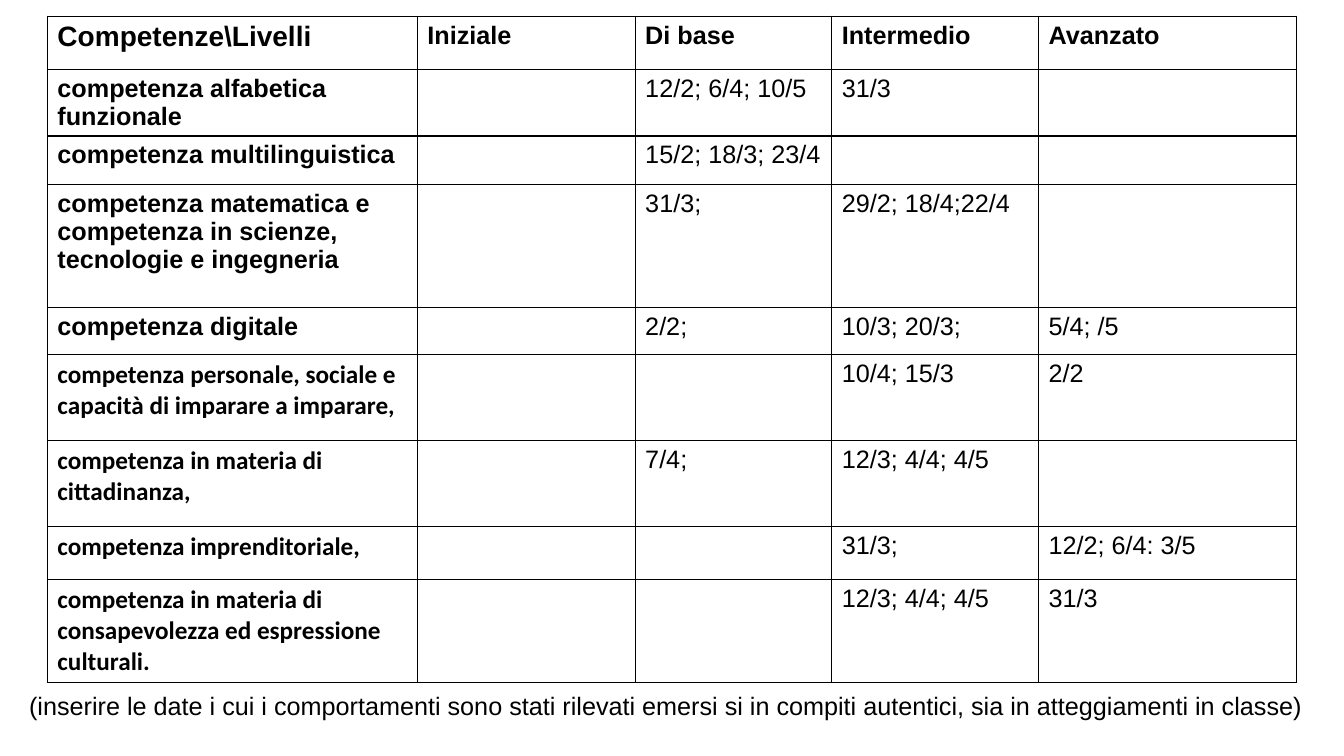
from dataclasses import dataclass

from lxml.etree import SubElement
from pptx import Presentation
from pptx.dml.color import RGBColor
from pptx.enum.text import MSO_AUTO_SIZE
from pptx.oxml.ns import qn
from pptx.util import Inches, Pt


@dataclass(frozen=True)
class Theme:
    ink: str = "000000"
    paper: str = "FFFFFF"
    main_font: str = "Arial"
    label_font: str = "Calibri"
    corner_size: int = 20
    body_size: int = 18
    border_width: int = 1


# Table content: header, then one competence per row
HEADER = ["Competenze\\Livelli", "Iniziale", "Di base", "Intermedio", "Avanzato"]
COMPETENCES = [
    ["competenza alfabetica funzionale", "", "12/2; 6/4; 10/5", "31/3", ""],
    ["competenza multilinguistica", "", "15/2; 18/3; 23/4", "", ""],
    ["competenza matematica e competenza in scienze, tecnologie e ingegneria",
     "", "31/3;", "29/2; 18/4;22/4", ""],
    ["competenza digitale", "", "2/2;", "10/3; 20/3;", "5/4; /5"],
    ["competenza personale, sociale e capacità di imparare a imparare,",
     "", "", "10/4; 15/3", "2/2"],
    ["competenza in materia di cittadinanza,", "", "7/4;", "12/3; 4/4; 4/5", ""],
    ["competenza imprenditoriale,", "", "", "31/3;", "12/2; 6/4: 3/5"],
    ["competenza in materia di consapevolezza ed espressione culturali.",
     "", "", "12/3; 4/4; 4/5", "31/3"],
]
COLUMN_WIDTHS = [3.67, 2.16, 1.95, 2.05, 2.56]
ROW_HEIGHTS = [0.53, 0.66, 0.48, 1.22, 0.47, 0.85, 0.85, 0.53, 1.02]
FIRST_CALIBRI_ROW = 5
NOTE = ("(inserire le date i cui i comportamenti sono stati rilevati emersi si in "
        "compiti autentici, sia in atteggiamenti in classe)")


class SlideBuilder:
    def __init__(self, slide, theme):
        self.slide = slide
        self.theme = theme

    def set_text(self, text_frame, text, **formats):
        paragraph = text_frame.paragraphs[0]
        style = {"name": self.theme.main_font, "size": Pt(self.theme.body_size),
                 "bold": False} | formats
        # Empty cells carry the style on the paragraph itself
        if text:
            run = paragraph.add_run()
            run.text = text
            font = run.font
        else:
            font = paragraph.font
        for name, value in style.items():
            setattr(font, name, value)
        font.color.rgb = RGBColor.from_string(self.theme.ink)

    def add_borders(self, cell):
        properties = cell._tc.get_or_add_tcPr()
        for index, side in enumerate(("lnL", "lnR", "lnT", "lnB")):
            line = properties.makeelement(
                qn(f"a:{side}"), {"w": str(int(Pt(self.theme.border_width)))})
            fill = SubElement(line, qn("a:solidFill"))
            SubElement(fill, qn("a:srgbClr"), val=self.theme.ink)
            properties.insert(index, line)

    def cell_format(self, row, column):
        formats = {"bold": row == 0 or column == 0}
        if row == 0 and column == 0:
            formats["size"] = Pt(self.theme.corner_size)
        if row >= FIRST_CALIBRI_ROW and column == 0:
            formats["name"] = self.theme.label_font
        return formats

    def add_table(self, left, top, rows, widths, heights):
        table = self.slide.shapes.add_table(
            len(rows), len(widths), Inches(left), Inches(top),
            Inches(sum(widths)), Inches(sum(heights))).table
        table.horz_banding = False
        for column, width in zip(table.columns, widths):
            column.width = Inches(width)
        for row, height in zip(table.rows, heights):
            row.height = Inches(height)
        for row_index, texts in enumerate(rows):
            for column_index, text in enumerate(texts):
                cell = table.cell(row_index, column_index)
                cell.fill.solid()
                cell.fill.fore_color.rgb = RGBColor.from_string(self.theme.paper)
                self.add_borders(cell)
                self.set_text(cell.text_frame, text,
                              **self.cell_format(row_index, column_index))

    def add_text(self, left, top, width, height, text):
        box = self.slide.shapes.add_textbox(
            Inches(left), Inches(top), Inches(width), Inches(height))
        box.text_frame.word_wrap = False
        box.text_frame.auto_size = MSO_AUTO_SIZE.SHAPE_TO_FIT_TEXT
        self.set_text(box.text_frame, text)


def main():
    presentation = Presentation()
    presentation.slide_width = Inches(13.33)
    presentation.slide_height = Inches(7.5)
    slide = presentation.slides.add_slide(presentation.slide_layouts[6])
    builder = SlideBuilder(slide, Theme())

    # Competence grid
    builder.add_table(0.47, 0.16, [HEADER, *COMPETENCES], COLUMN_WIDTHS, ROW_HEIGHTS)

    # Note below the grid
    builder.add_text(0.19, 6.8, 12.95, 0.4, NOTE)

    presentation.save("out.pptx")


if __name__ == "__main__":
    main()
